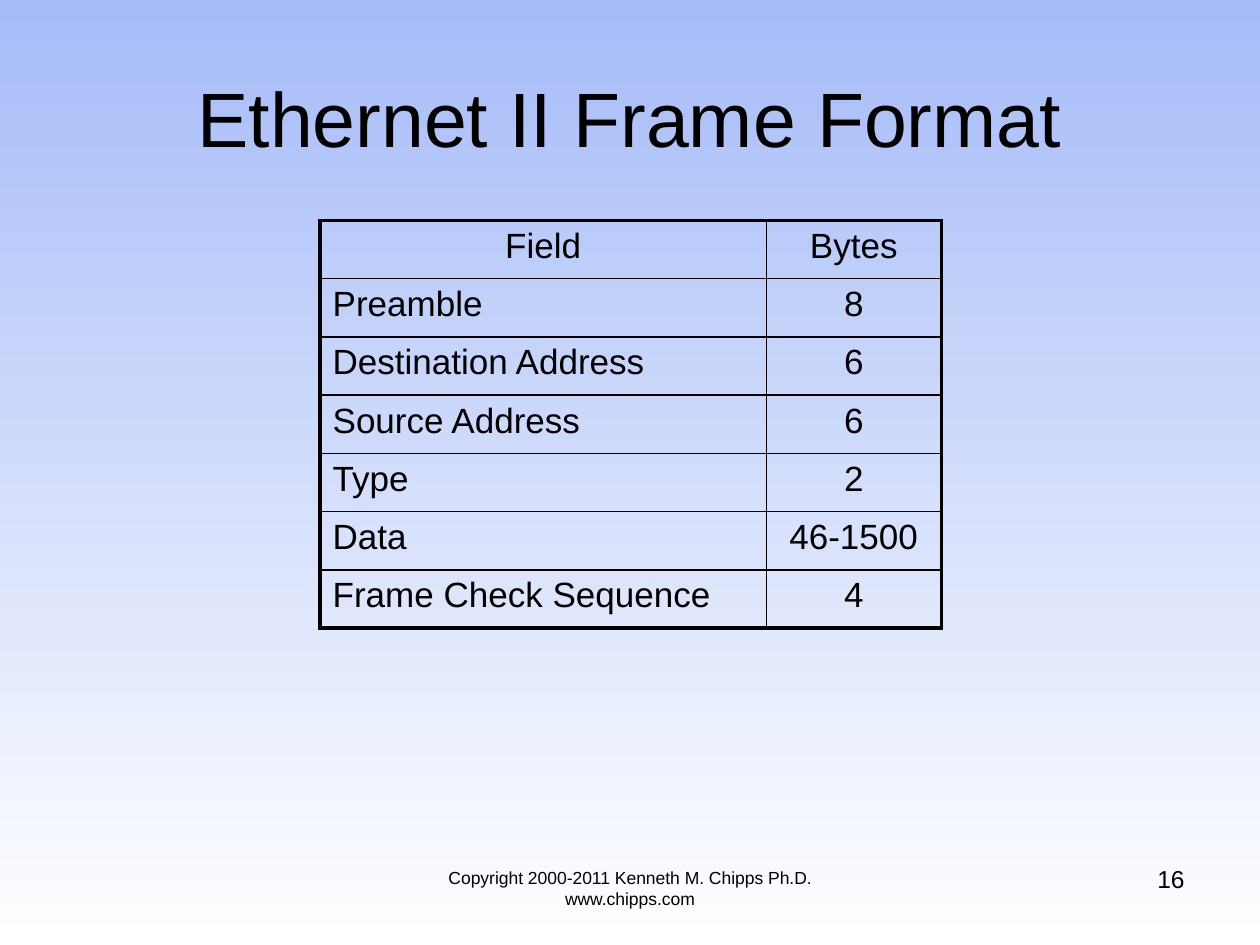
from lxml import etree
from pptx import Presentation
from pptx.dml.color import RGBColor
from pptx.enum.text import MSO_ANCHOR as Anchor, PP_ALIGN as Align
from pptx.oxml.ns import qn
from pptx.util import Pt

BLACK = RGBColor(0x00, 0x00, 0x00)
SKY = RGBColor(0xA6, 0xBB, 0xF8)
WHITE = RGBColor(0xFF, 0xFF, 0xFF)
FONT = "Arial"
INNER_LINE, OUTER_LINE = Pt(1), Pt(2.25)


def write_text(frame, text, size=20, align=Align.CENTER, anchor=Anchor.TOP):
    frame.word_wrap = True
    frame.vertical_anchor = anchor
    paragraph = frame.paragraphs[0]
    paragraph.alignment = align
    run = paragraph.add_run()
    run.text = text
    run.font.name = FONT
    run.font.size = Pt(size)
    run.font.bold = False
    run.font.color.rgb = BLACK


def set_borders(cell, outer_sides):
    properties = cell._tc.get_or_add_tcPr()
    for index, side in enumerate(("L", "R", "T", "B")):
        width = OUTER_LINE if side in outer_sides else INNER_LINE
        line = etree.Element(qn(f"a:ln{side}"), w=str(width))
        fill = etree.SubElement(line, qn("a:solidFill"))
        etree.SubElement(fill, qn("a:srgbClr"), val=str(BLACK))
        properties.insert(index, line)


presentation = Presentation()
presentation.slide_width = Pt(720)
presentation.slide_height = Pt(540)
slide = presentation.slides.add_slide(presentation.slide_layouts[5])

# Background gradient, top to bottom
background = slide.background.fill
background.gradient()
background.gradient_angle = 270
for stop, color, position in zip(background.gradient_stops, (SKY, WHITE), (0, 1)):
    stop.color.rgb = color
    stop.position = position

# Title
title = slide.shapes.title
title.left, title.top, title.width, title.height = Pt(36), Pt(21.6), Pt(648), Pt(90)
write_text(title.text_frame, "Ethernet II Frame Format", size=44, anchor=Anchor.MIDDLE)

# Frame field table
ROWS = [
    ("Field", "Bytes"),
    ("Preamble", "8"),
    ("Destination Address", "6"),
    ("Source Address", "6"),
    ("Type", "2"),
    ("Data", "46-1500"),
    ("Frame Check Sequence", "4"),
]
COLUMN_WIDTHS = (255, 100)
ROW_HEIGHT = 33.3
table = slide.shapes.add_table(
    len(ROWS), len(COLUMN_WIDTHS), Pt(182.9), Pt(126),
    Pt(sum(COLUMN_WIDTHS)), Pt(ROW_HEIGHT * len(ROWS))).table
table.first_row = table.horz_banding = False
for column, width in zip(table.columns, COLUMN_WIDTHS):
    column.width = Pt(width)
for row_index, values in enumerate(ROWS):
    table.rows[row_index].height = Pt(ROW_HEIGHT)
    for column_index, value in enumerate(values):
        cell = table.cell(row_index, column_index)
        is_field_name = row_index > 0 and column_index == 0
        write_text(cell.text_frame, value, align=Align.LEFT if is_field_name else Align.CENTER)
        cell.fill.background()
        outer_sides = "L" if column_index == 0 else "R"
        if row_index == 0:
            outer_sides += "T"
        if row_index == len(ROWS) - 1:
            outer_sides += "B"
        set_borders(cell, outer_sides)

# Footer and slide number
copyright_box = slide.shapes.add_textbox(Pt(216), Pt(491.8), Pt(288), Pt(37.4))
write_text(copyright_box.text_frame,
           "Copyright 2000-2011 Kenneth M. Chipps Ph.D. www.chipps.com", size=10)
number_box = slide.shapes.add_textbox(Pt(516), Pt(490.3), Pt(168), Pt(37.4))
write_text(number_box.text_frame, "16", size=14, align=Align.RIGHT)

presentation.save("out.pptx")
